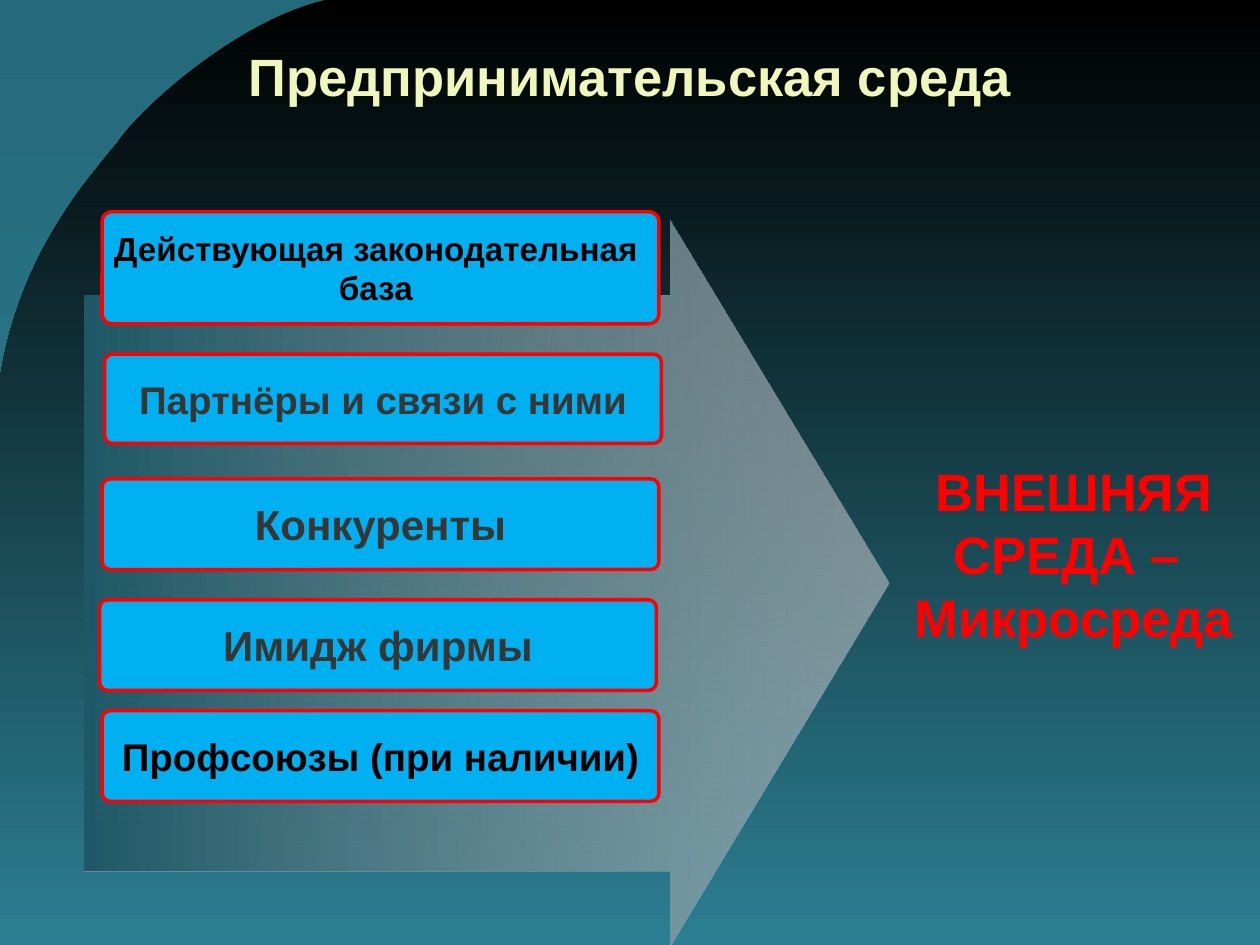
from dataclasses import dataclass

from lxml import etree
from pptx import Presentation
from pptx.dml.color import RGBColor
from pptx.enum.shapes import MSO_SHAPE
from pptx.enum.text import MSO_ANCHOR, PP_ALIGN
from pptx.oxml import parse_xml
from pptx.oxml.ns import qn
from pptx.util import Inches, Pt

ROUNDED = MSO_SHAPE.ROUNDED_RECTANGLE
RIGHT_ARROW = MSO_SHAPE.RIGHT_ARROW
MIDDLE = MSO_ANCHOR.MIDDLE
CENTER = PP_ALIGN.CENTER


@dataclass(frozen=True)
class Theme:
    font: str = "Arial"
    backdrop: tuple = ("256A7A", "2C7F92")
    curve: tuple = ("000000", "2C7F92")
    arrow: tuple = ("1F5967", "B0B8BC")
    factor: str = "00B0F0"
    accent: str = "FF0000"
    black: str = "000000"
    gray: str = "363636"
    title: str = "F0F7BD"
    heading_size: int = 30
    large: int = 24
    medium: int = 22
    small: int = 19


theme = Theme()


def fill_gradient(fill, colors, angle):
    fill.gradient()
    fill.gradient_angle = angle
    for stop, color in zip(fill.gradient_stops, colors):
        stop.color.rgb = RGBColor.from_string(color)


def write_lines(frame, lines, size, color, wrap):
    frame.word_wrap = wrap
    frame.vertical_anchor = MIDDLE
    for index, line in enumerate(lines):
        paragraph = frame.add_paragraph() if index else frame.paragraphs[0]
        paragraph.alignment = CENTER
        run = paragraph.add_run()
        run.text = line
        run.font.name = theme.font
        run.font.size = Pt(size)
        run.font.bold = True
        run.font.color.rgb = RGBColor.from_string(color)


prs = Presentation()
prs.slide_width = Inches(10)
prs.slide_height = Inches(7.5)
slide = prs.slides.add_slide(prs.slide_layouts[5])
shapes = slide.shapes
fill_gradient(slide.background.fill, theme.backdrop, 270)

curve_start = (2.58, 0)
curve_segments = [
    ((1.9, 0.16), (1.16, 0.83), (0.98, 1.07)),
    ((0.8, 1.32), (0.16, 1.94), (0, 3.01)),
]
steps = 24
outline = []
start = curve_start
for control_1, control_2, end in curve_segments:
    for step in range(1, steps + 1):
        t = step / steps
        outline.append(tuple(
            Inches((1 - t) ** 3 * a + 3 * (1 - t) ** 2 * t * b + 3 * (1 - t) * t ** 2 * c + t ** 3 * d)
            for a, b, c, d in zip(start, control_1, control_2, end)
        ))
    start = end
outline += [(Inches(x), Inches(y)) for x, y in [(0, 7.5), (10, 7.5), (10, 0)]]
builder = shapes.build_freeform(Inches(curve_start[0]), Inches(curve_start[1]))
builder.add_line_segments(outline, close=True)
curve = builder.convert_to_shape()
curve.shadow.inherit = False
fill_gradient(curve.fill, theme.curve, 270)
curve.line.fill.background()

arrow = shapes.add_shape(RIGHT_ARROW, Inches(0.67), Inches(1.75), Inches(6.38), Inches(5.75))
arrow.adjustments[0] = 0.793
arrow.adjustments[1] = 0.302
arrow.shadow.inherit = False
fill_gradient(arrow.fill, theme.arrow, 0)
arrow.line.fill.background()
arrow_end = list(arrow.element.spPr.iter(qn("a:srgbClr")))[-1]
etree.SubElement(arrow_end, qn("a:alpha")).set("val", "65000")

factors = [
    (0.81, 1.68, 0.89, ["Действующая законодательная ", "база "], theme.small, theme.black),
    (0.83, 2.81, 0.71, ["Партнёры и связи с ними"], theme.medium, theme.gray),
    (0.81, 3.8, 0.72, ["Конкуренты"], theme.large, theme.gray),
    (0.79, 4.76, 0.72, ["Имидж фирмы"], theme.large, theme.gray),
    (0.81, 5.64, 0.72, ["Профсоюзы (при наличии)"], theme.medium, theme.black),
]
for left, top, height, lines, size, color in factors:
    factor = shapes.add_shape(ROUNDED, Inches(left), Inches(top), Inches(4.42), Inches(height))
    factor.adjustments[0] = 0.091
    factor.shadow.inherit = False
    factor.fill.solid()
    factor.fill.fore_color.rgb = RGBColor.from_string(theme.factor)
    factor.line.color.rgb = RGBColor.from_string(theme.accent)
    factor.line.width = Pt(2)
    write_lines(factor.text_frame, lines, size, color, False)

environment = shapes.add_shape(ROUNDED, Inches(6.89), Inches(3.2), Inches(3.27), Inches(2.39))
environment.adjustments[0] = 0.091
environment.shadow.inherit = False
environment.fill.background()
environment.line.fill.background()
write_lines(environment.text_frame, ["ВНЕШНЯЯ", "СРЕДА – ", "Микросреда"],
            theme.heading_size, theme.accent, True)

title = shapes.title
title.left, title.top = Inches(0.5), Inches(0.25)
title.width, title.height = Inches(9), Inches(0.7)
write_lines(title.text_frame, ["Предпринимательская среда"], theme.heading_size, theme.title, True)
title_fill = next(title.element.iter(qn("a:rPr"))).find(qn("a:solidFill"))
title_fill.addnext(parse_xml(
    '<a:effectLst xmlns:a="http://schemas.openxmlformats.org/drawingml/2006/main">'
    '<a:outerShdw dist="35921" dir="2700000" algn="ctr">'
    f'<a:srgbClr val="{theme.black}"/></a:outerShdw></a:effectLst>'
))
title.element.getparent().append(title.element)

prs.save("out.pptx")
